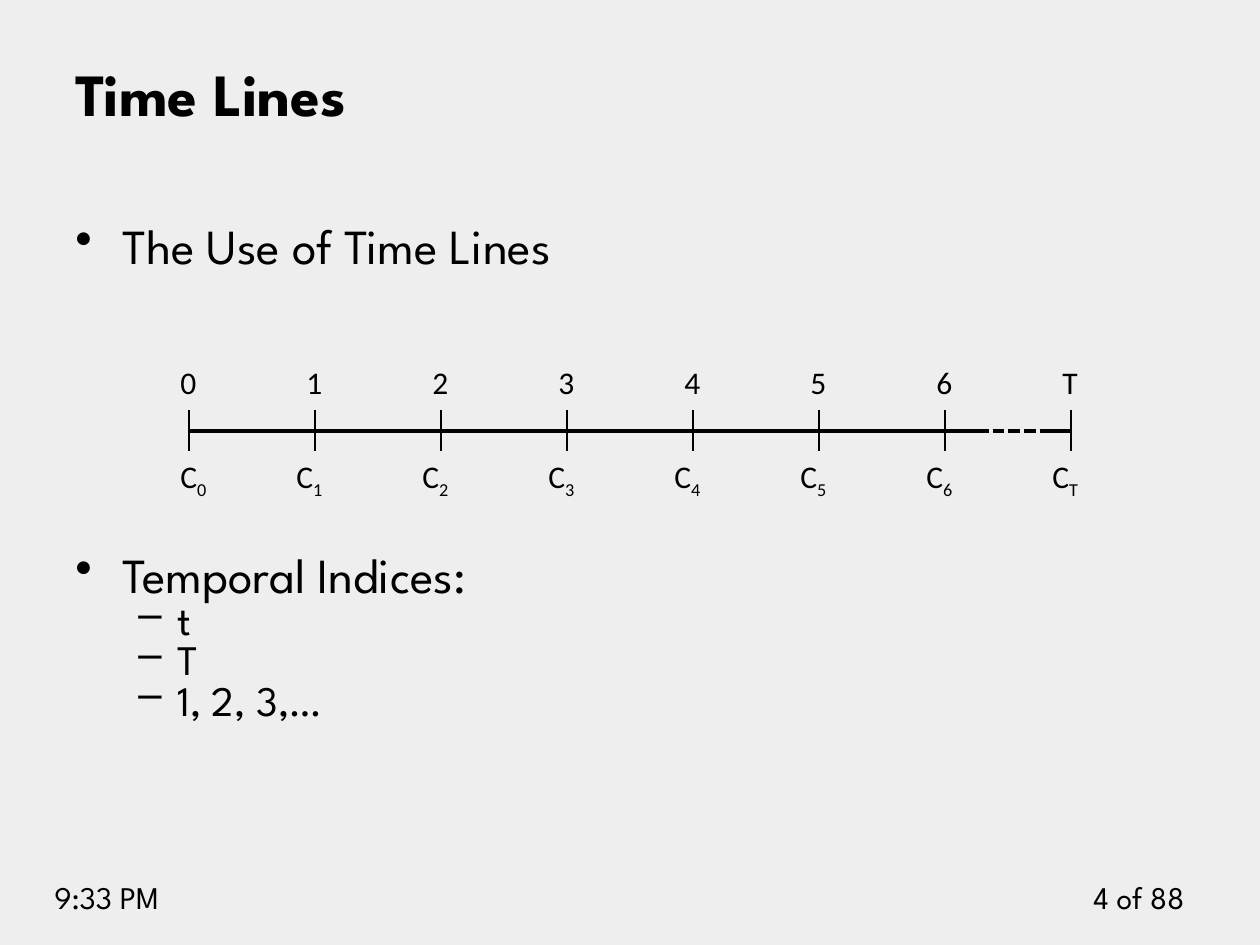
from lxml.etree import SubElement
from pptx import Presentation
from pptx.dml.color import RGBColor
from pptx.enum.dml import MSO_LINE
from pptx.enum.shapes import MSO_CONNECTOR
from pptx.enum.text import MSO_ANCHOR, PP_ALIGN
from pptx.oxml.ns import qn
from pptx.util import Emu, Pt

COLORS = {"ink": "000000", "paper": "EEEEEE"}
HEADING, LABEL = "League Spartan", "Calibri"

TITLE = "Time Lines"
# text, level, space before in points
OUTLINE = [
    ("The Use of Time Lines", 0, 0),
    ("Temporal Indices:", 0, 161),
    ("t", 1, 0),
    ("T", 1, 0),
    ("1, 2, 3,…", 1, 0),
]
LEVELS = [
    {"mark": "•", "size": 28, "margin": 47, "hang": 47},
    {"mark": "–", "size": 24, "margin": 102, "hang": 39},
]
PERIODS = ["0", "1", "2", "3", "4", "5", "6", "T"]
# text, left, width, alignment
FOOTERS = [
    ("4 of 88", 1050, 147, PP_ALIGN.RIGHT),
    ("9:33 PM", 42, 199, PP_ALIGN.LEFT),
]

FIRST_TICK, STEP = 189, 126
TICK_TOP, AXIS_Y, TICK_BOTTOM = 410, 431, 451
# start, end, dash style
AXIS = [
    (189, 977, None),
    (977, 1040, MSO_LINE.SQUARE_DOT),
    (1040, 1071, None),
]


def px(length):
    """Turn px (126 to the inch) into EMU."""
    return Emu(round(length * 914400 / 126))


def ink():
    return RGBColor.from_string(COLORS["ink"])


def add_box(page, left, top, width, height, anchor=MSO_ANCHOR.TOP):
    box = page.shapes.add_textbox(px(left), px(top), px(width), px(height))
    frame = box.text_frame
    frame.word_wrap = True
    frame.vertical_anchor = anchor
    return frame


def add_span(para, text, size, name=HEADING, **extra):
    span = para.add_run()
    span.text = text
    for key, value in {"size": Pt(size), "name": name, **extra}.items():
        setattr(span.font, key, value)
    span.font.color.rgb = ink()
    return span


def add_line(page, x1, y1, x2, y2, weight, dash=None):
    line = page.shapes.add_connector(
        MSO_CONNECTOR.STRAIGHT, px(x1), px(y1), px(x2), px(y2))
    line.line.color.rgb = ink()
    line.line.width = Pt(weight)
    if dash:
        line.line.dash_style = dash
    SubElement(line.element.spPr, qn("a:effectLst"))


def add_outline(page):
    frame = add_box(page, 63, 221, 1134, 624)
    for index, (text, level, gap) in enumerate(OUTLINE):
        para = frame.add_paragraph() if index else frame.paragraphs[0]
        style = LEVELS[level]
        para.level = level
        para.line_spacing = 0.8
        if gap:
            para.space_before = Pt(gap)
        props = para._p.get_or_add_pPr()
        props.set("marL", str(px(style["margin"])))
        props.set("indent", str(-px(style["hang"])))
        SubElement(props, qn("a:buChar"), char=style["mark"])
        add_span(para, text, style["size"])


def add_timeline(page):
    for start, end, dash in AXIS:
        add_line(page, start, AXIS_Y, end, AXIS_Y, 2.25, dash)
    for index, period in enumerate(PERIODS):
        x = FIRST_TICK + index * STEP
        add_line(page, x, TICK_TOP, x, TICK_BOTTOM, 1)
        number = add_box(page, x - 21, 357, 42, 50)
        add_span(number.paragraphs[0], period, 18, LABEL)
        cash = add_box(page, x - (31 if index else 21), 451, 73, 50)
        add_span(cash.paragraphs[0], "C", 18, LABEL)
        subscript = add_span(cash.paragraphs[0], period, 18, LABEL)
        subscript.font._element.set("baseline", "-25000")


def main():
    deck = Presentation()
    deck.slide_width, deck.slide_height = px(1260), px(945)
    page = deck.slides.add_slide(deck.slide_layouts[6])
    page.background.fill.solid()
    page.background.fill.fore_color.rgb = RGBColor.from_string(COLORS["paper"])

    for text, left, width, align in FOOTERS:
        para = add_box(page, left, 872, width, 50).paragraphs[0]
        para.alignment = align
        add_span(para, text, 18)
    title = add_box(page, 63, 49, 1134, 86, MSO_ANCHOR.BOTTOM)
    add_span(title.paragraphs[0], TITLE, 34.2, bold=True)
    add_outline(page)
    add_timeline(page)
    deck.save("out.pptx")


if __name__ == "__main__":
    main()
